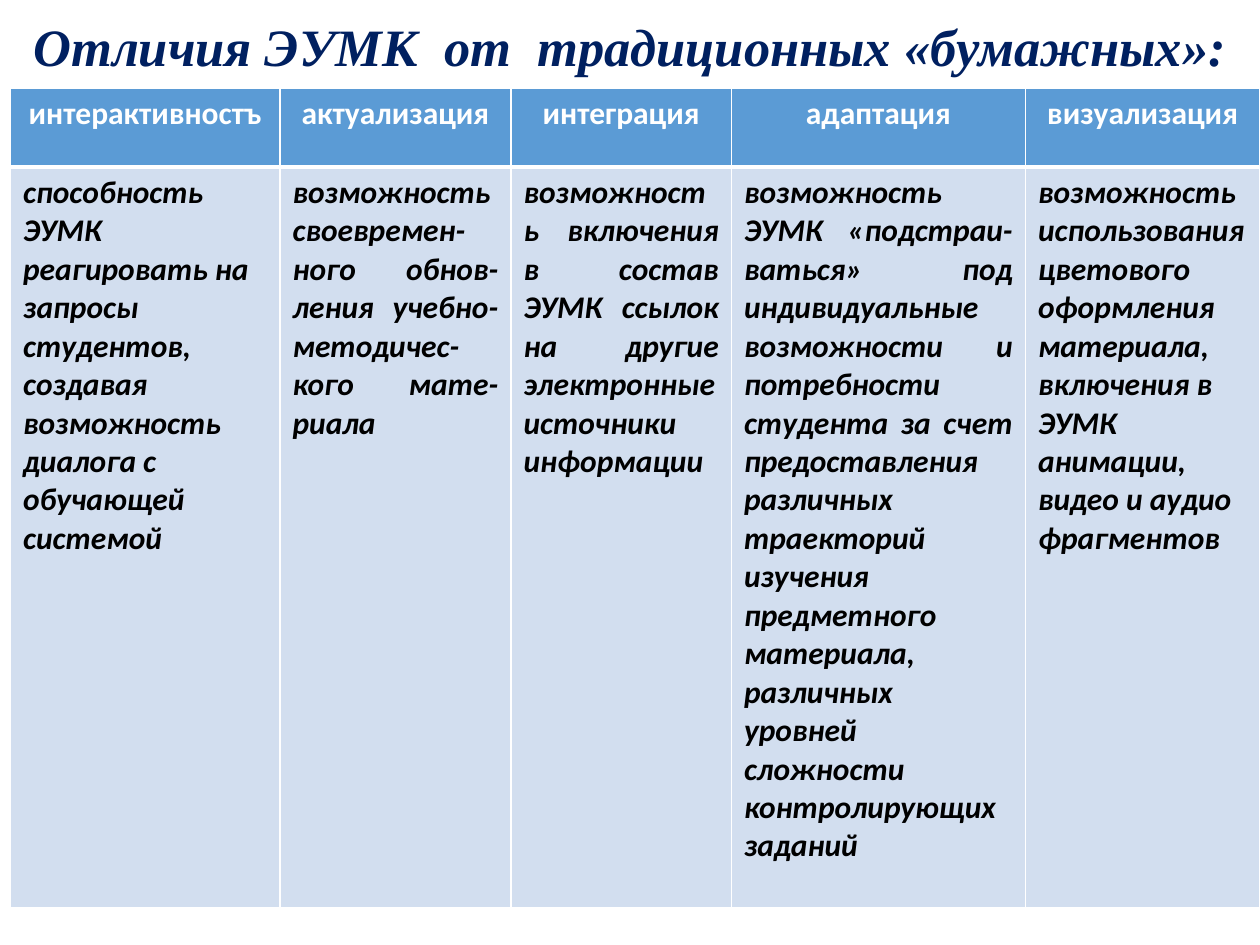
import pptx
import pptx.dml.color
import pptx.enum.text
import pptx.oxml
import pptx.oxml.ns
import pptx.util
from lxml import etree

Pt = pptx.util.Pt
RGBColor = pptx.dml.color.RGBColor
Align = pptx.enum.text.PP_ALIGN

NAVY = RGBColor(0x00, 0x20, 0x60)
BLUE = RGBColor(0x5B, 0x9B, 0xD5)
PALE = RGBColor(0xD2, 0xDE, 0xEF)
WHITE = RGBColor(0xFF, 0xFF, 0xFF)
BLACK = RGBColor(0x00, 0x00, 0x00)

TITLE = "Отличия ЭУМК  от  традиционных «бумажных»:"
# Heading, column width in points, description, alignment of the description
FEATURES = [
    ("интерактивностъ", 154,
     "способность ЭУМК реагировать на запросы студентов, создавая "
     "возможность диалога с обучающей системой", Align.LEFT),
    ("актуализация", 132,
     "возможность своевремен-ного обнов-ления учебно-методичес-кого "
     "мате-риала", Align.JUSTIFY),
    ("интеграция", 126,
     "возможность включения в состав ЭУМК ссылок на другие электронные "
     "источники информации", Align.JUSTIFY),
    ("адаптация", 168,
     "возможность ЭУМК «подстраи-ваться» под индивидуальные возможности и "
     "потребности студента за счет предоставления различных траекторий "
     "изучения предметного материала, различных уровней сложности "
     "контролирующих заданий", Align.JUSTIFY),
    ("визуализация", 134,
     "возможность использования цветового оформления материала, включения "
     "в ЭУМК анимации, видео и аудио фрагментов", Align.LEFT),
]
ROW_HEIGHTS = (45, 423)


def format_text(para, font, size, color, align, italic):
    para.alignment = align
    for span in para.runs:
        span.font.name = font
        span.font.size = Pt(size)
        span.font.bold = True
        span.font.italic = italic
        span.font.color.rgb = color


def set_borders(cell, bottom_width):
    """Draw white cell borders, 1 pt except for the bottom one."""
    properties = cell._tc.get_or_add_tcPr()
    sides = (("lnL", 1), ("lnR", 1), ("lnT", 1), ("lnB", bottom_width))
    for position, (side, width) in enumerate(sides):
        line = etree.Element(pptx.oxml.ns.qn("a:" + side), w=str(Pt(width)))
        fill = etree.SubElement(line, pptx.oxml.ns.qn("a:solidFill"))
        etree.SubElement(fill, pptx.oxml.ns.qn("a:srgbClr"), val=str(WHITE))
        properties.insert(position, line)


def fill_cell(cell, text, fill, color, align, italic, bottom_width):
    cell.text_frame.text = text
    format_text(cell.text_frame.paragraphs[0], "Calibri", 18, color, align, italic)
    cell.fill.solid()
    cell.fill.fore_color.rgb = fill
    set_borders(cell, bottom_width)


def place_title(page, left, top, width, height):
    title = page.shapes.title
    title.left, title.top = Pt(left), Pt(top)
    title.width, title.height = Pt(width), Pt(height)
    frame = title.text_frame
    frame.text = TITLE
    frame.word_wrap = True
    frame.auto_size = pptx.enum.text.MSO_AUTO_SIZE.NONE
    frame.vertical_anchor = pptx.enum.text.MSO_ANCHOR.MIDDLE
    para = frame.paragraphs[0]
    para.line_spacing = 0.9
    format_text(para, "Times New Roman", 30, NAVY, Align.CENTER, True)


def place_features(page, left, top, width, height):
    table = page.shapes.add_table(
        len(ROW_HEIGHTS), len(FEATURES), Pt(left), Pt(top), Pt(width), Pt(height)
    ).table
    for row, row_height in zip(table.rows, ROW_HEIGHTS):
        row.height = Pt(row_height)
    for index, (heading, column_width, description, align) in enumerate(FEATURES):
        table.columns[index].width = Pt(column_width)
        fill_cell(table.cell(0, index), heading, BLUE, WHITE, Align.CENTER, False, 3)
        fill_cell(table.cell(1, index), description, PALE, BLACK, align, True, 1)


def main():
    deck = pptx.Presentation()
    deck.slide_width, deck.slide_height = Pt(720), Pt(540)
    page = deck.slides.add_slide(deck.slide_layouts.get_by_name("Title Only"))
    place_title(page, 0, 6, 720, 45)
    place_features(page, 6, 50.5, sum(feature[1] for feature in FEATURES),
                   sum(ROW_HEIGHTS))
    deck.save("out.pptx")


if __name__ == "__main__":
    main()
